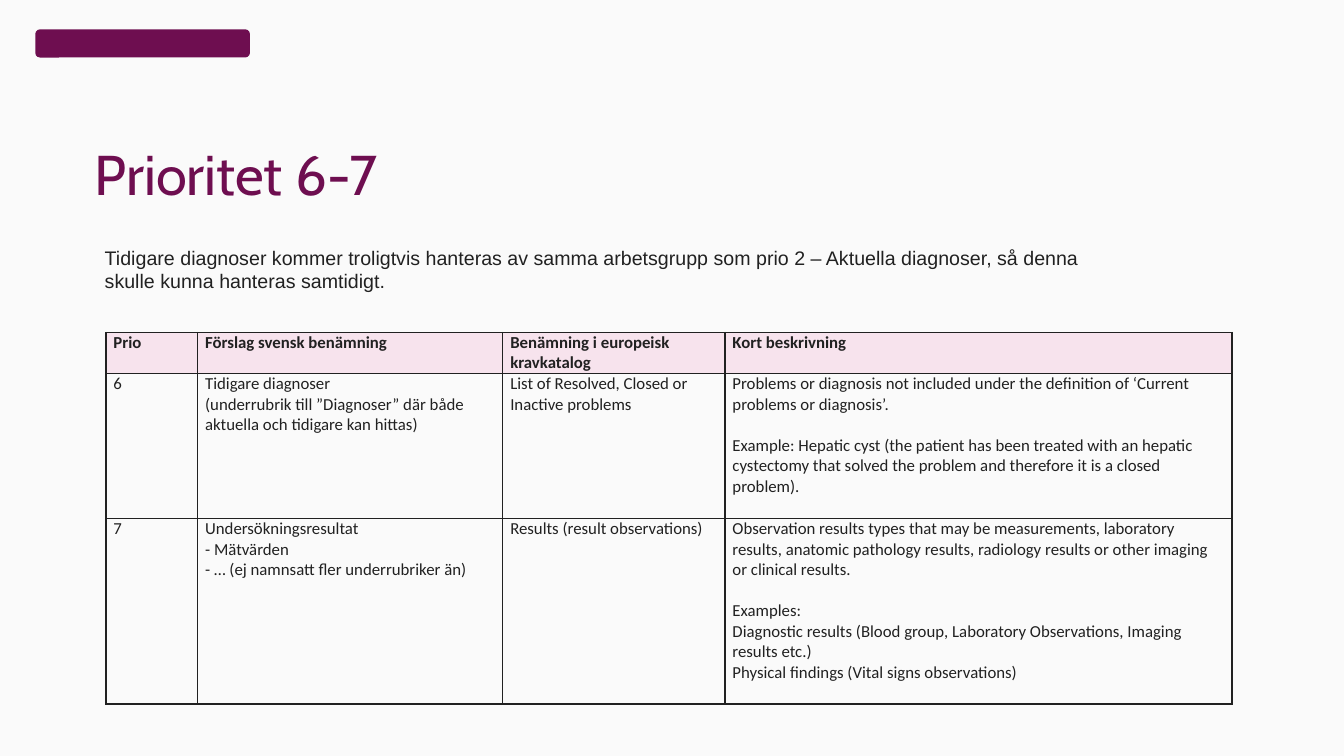
from lxml.etree import SubElement
from pptx import Presentation
from pptx.dml.color import RGBColor
from pptx.enum.shapes import MSO_SHAPE as Shape
from pptx.enum.text import MSO_ANCHOR as Anchor
from pptx.oxml.ns import qn
from pptx.util import Cm, Pt

COLORS = {
    "background": "FAFAFA",
    "plum": "6E0E50",
    "pink": "F7E3ED",
    "ink": "212121",
}
COLUMN_WIDTHS = [2.31, 7.69, 5.6, 12.78]
ROW_HEIGHTS = [1.04, 3.65, 4.67]
LINE_GAP = 14.65
GAP_BEFORE = ("Example: ", "Examples:")
ROWS = [
    [
        ["Prio"],
        ["Förslag svensk benämning"],
        ["Benämning i europeisk kravkatalog"],
        ["Kort beskrivning"],
    ],
    [
        ["6"],
        [
            "Tidigare diagnoser",
            "(underrubrik till ”Diagnoser” där både aktuella och tidigare kan hittas)",
        ],
        ["List of Resolved, Closed or Inactive problems"],
        [
            "Problems or diagnosis not included under the definition of "
            "‘Current problems or diagnosis’.",
            "Example: Hepatic cyst (the patient has been treated with an hepatic "
            "cystectomy that solved the problem and therefore it is a closed problem).",
        ],
    ],
    [
        ["7"],
        [
            "Undersökningsresultat",
            "- Mätvärden",
            "- … (ej namnsatt fler underrubriker än)",
        ],
        ["Results (result observations)"],
        [
            "Observation results types that may be measurements, laboratory results, "
            "anatomic pathology results, radiology results or other imaging or "
            "clinical results.",
            "Examples:",
            "Diagnostic results (Blood group, Laboratory Observations, Imaging results etc.)",
            "Physical findings (Vital signs observations)",
        ],
    ],
]


def color(name):
    return RGBColor.from_string(COLORS[name])


def add_span(para, text, font, size, ink, bold=False):
    span = para.add_run()
    span.text = text
    span.font.name = font
    span.font.size = Pt(size)
    span.font.bold = bold
    span.font.color.rgb = color(ink)


def add_text(page, left, top, width, height, text, font, size, ink):
    box = page.shapes.add_textbox(Cm(left), Cm(top), Cm(width), Cm(height))
    box.text_frame.word_wrap = True
    add_span(box.text_frame.paragraphs[0], text, font, size, ink)
    return box.text_frame


def add_title(page, text):
    frame = add_text(page, 2.39, 3.68, 29.11, 1.55, text, "Cabin", 40, "plum")
    frame.margin_left = frame.margin_right = frame.margin_top = frame.margin_bottom = 0
    frame.vertical_anchor = Anchor.BOTTOM
    frame.paragraphs[0].line_spacing = 0.9


def add_brand_bar(page):
    bar = page.shapes.add_shape(
        Shape.ROUNDED_RECTANGLE, Cm(0.89), Cm(0.74), Cm(5.41), Cm(0.71)
    )
    bar.shadow.inherit = False
    bar.fill.solid()
    bar.fill.fore_color.rgb = color("plum")
    bar.line.fill.background()


def set_borders(cell):
    properties = cell._tc.get_or_add_tcPr()
    for index, side in enumerate(("lnL", "lnR", "lnT", "lnB")):
        line = SubElement(properties, qn(f"a:{side}"), w=str(Pt(1)))
        fill = SubElement(line, qn("a:solidFill"))
        SubElement(fill, qn("a:srgbClr"), val=COLORS["ink"])
        properties.insert(index, line)


def fill_cell(cell, texts, header):
    cell.margin_left = cell.margin_right = Cm(0.19)
    cell.margin_top = cell.margin_bottom = 0
    if header:
        cell.fill.solid()
        cell.fill.fore_color.rgb = color("pink")
    else:
        cell.fill.background()
    set_borders(cell)
    frame = cell.text_frame
    for index, text in enumerate(texts):
        para = frame.add_paragraph() if index else frame.paragraphs[0]
        if text.startswith(GAP_BEFORE):
            para.space_before = Pt(LINE_GAP)
        add_span(para, text, "Calibri", 12, "ink", header)


def add_priority_table(page):
    table = page.shapes.add_table(
        len(ROWS), len(COLUMN_WIDTHS), Cm(2.67), Cm(8.38),
        Cm(sum(COLUMN_WIDTHS)), Cm(sum(ROW_HEIGHTS)),
    ).table
    table.horz_banding = False
    for column, width in zip(table.columns, COLUMN_WIDTHS):
        column.width = Cm(width)
    for index, (row, height, contents) in enumerate(zip(table.rows, ROW_HEIGHTS, ROWS)):
        row.height = Cm(height)
        for cell, texts in zip(row.cells, contents):
            fill_cell(cell, texts, index == 0)


def main():
    deck = Presentation()
    deck.slide_width, deck.slide_height = Cm(33.87), Cm(19.05)
    page = deck.slides.add_slide(deck.slide_layouts[6])
    page.background.fill.solid()
    page.background.fill.fore_color.rgb = color("background")
    add_brand_bar(page)
    add_title(page, "Prioritet 6-7")
    add_priority_table(page)
    add_text(
        page, 2.39, 6.07, 25.5, 1.45,
        "Tidigare diagnoser kommer troligtvis hanteras av samma arbetsgrupp som "
        "prio 2 – Aktuella diagnoser, så denna skulle kunna hanteras samtidigt.",
        "Arial", 14, "ink",
    )
    deck.save("out.pptx")


if __name__ == "__main__":
    main()
